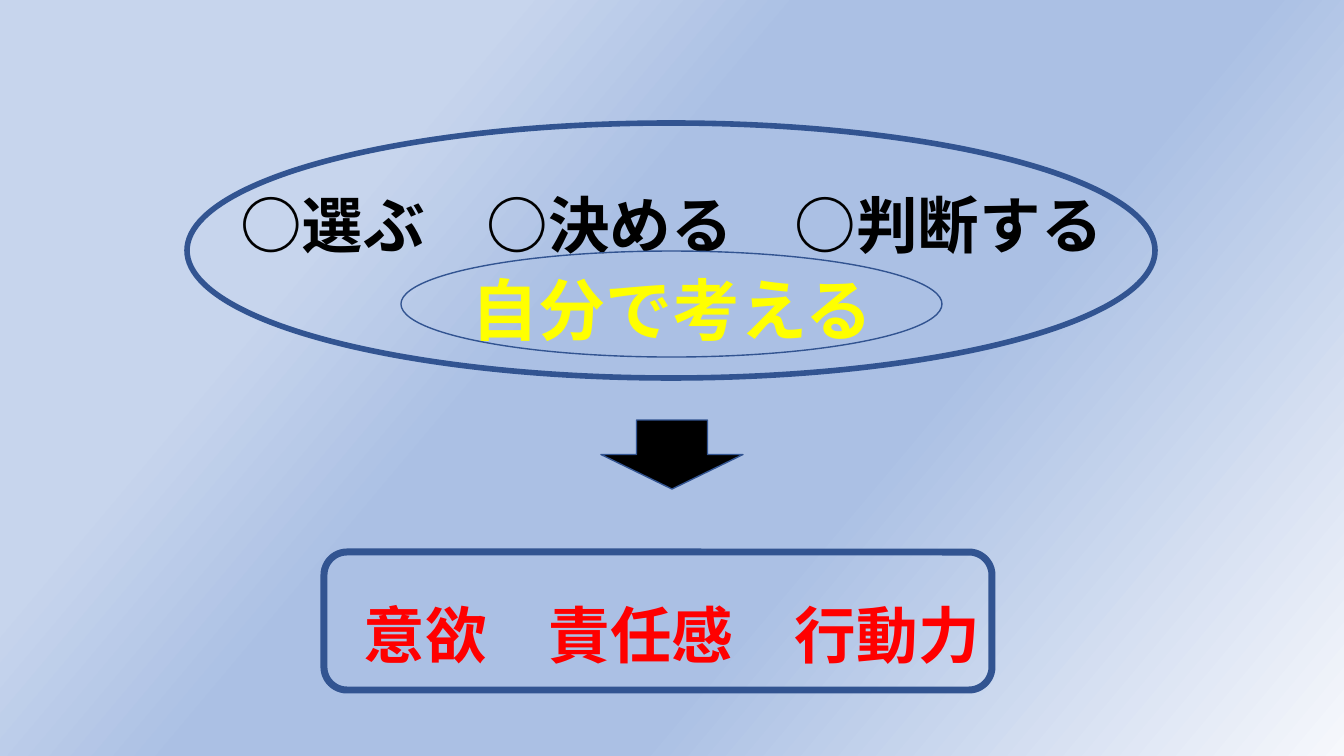
from copy import deepcopy
from pptx import Presentation
from pptx.dml.color import RGBColor
from pptx.enum.shapes import MSO_SHAPE
from pptx.enum.text import MSO_ANCHOR, MSO_AUTO_SIZE, PP_ALIGN
from pptx.oxml.ns import qn
from pptx.util import Pt

PX = 914400 * 10 // 1008
FONT = "Noto Sans CJK JP"
COLORS = {
    "pale": "C7D5ED", "blue": "ABC0E4", "white": "F6F8FC", "outline": "325491",
    "black": "000000", "yellow": "FFFF00", "red": "FF0000",
}


def color(name):
    return RGBColor.from_string(COLORS[name])


deck = Presentation()
deck.slide_width, deck.slide_height = 1344 * PX, 756 * PX
page = deck.slides.add_slide(deck.slide_layouts[0])

# Diagonal background gradient
background = page.background.fill
background.gradient()
gradient = background._fill._gradFill
stop_list = gradient.find(qn("a:gsLst"))
while len(stop_list) < 4:
    stop_list.append(deepcopy(stop_list[0]))
stops = [(0.26, "pale"), (0.41, "blue"), (0.64, "blue"), (1, "white")]
for stop, (position, name) in zip(background.gradient_stops, stops):
    stop.position = position
    stop.color.rgb = color(name)
direction = gradient.find(qn("a:lin"))
direction.set("ang", str(40 * 60000))
direction.set("scaled", "0")

# Words in the subtitle placeholder
title = page.shapes.title
title.element.getparent().remove(title.element)
body = page.placeholders[1]
body.left, body.top, body.width, body.height = (n * PX for n in (168, 98, 1008, 573))
frame = body.text_frame
frame_format = {
    "word_wrap": True, "auto_size": MSO_AUTO_SIZE.NONE,
    "vertical_anchor": MSO_ANCHOR.TOP, "margin_top": 79 * PX,
}
for key, value in frame_format.items():
    setattr(frame, key, value)

lines = [
    ("○選ぶ　○決める　○判断する", 44, "black", 0),
    ("自分で考える", 48, "yellow", 3),
    ("意欲　責任感　行動力", 44, "red", 170),
]
for index, (words, size, name, gap) in enumerate(lines):
    para = frame.add_paragraph() if index else frame.paragraphs[0]
    para_format = {
        "alignment": PP_ALIGN.CENTER, "line_spacing": Pt(60), "space_before": Pt(gap),
    }
    for key, value in para_format.items():
        setattr(para, key, value)
    span = para.add_run()
    span.text = words
    for key, value in {"name": FONT, "size": Pt(size), "bold": True}.items():
        setattr(span.font, key, value)
    span.font.color.rgb = color(name)
    east_asian = span.font._element.makeelement(qn("a:ea"), {"typeface": FONT})
    span.font._element.find(qn("a:latin")).addnext(east_asian)

# Outlines around the words, and the arrow between them
shapes = [
    (MSO_SHAPE.OVAL, (187, 123, 968, 255), 4, None),
    (MSO_SHAPE.ROUNDED_RECTANGLE, (324, 552, 668, 138), 5, None),
    (MSO_SHAPE.DOWN_ARROW, (601, 420, 142, 69), 1, "black"),
    (MSO_SHAPE.OVAL, (401, 251, 541, 106), 1, None),
]
for kind, place, weight, fill in shapes:
    shape = page.shapes.add_shape(kind, *(n * PX for n in place))
    shape.shadow.inherit = False
    shape.line.color.rgb = color("outline")
    shape.line.width = Pt(weight)
    if fill:
        shape.fill.solid()
        shape.fill.fore_color.rgb = color(fill)
    else:
        shape.fill.background()

deck.save("out.pptx")
